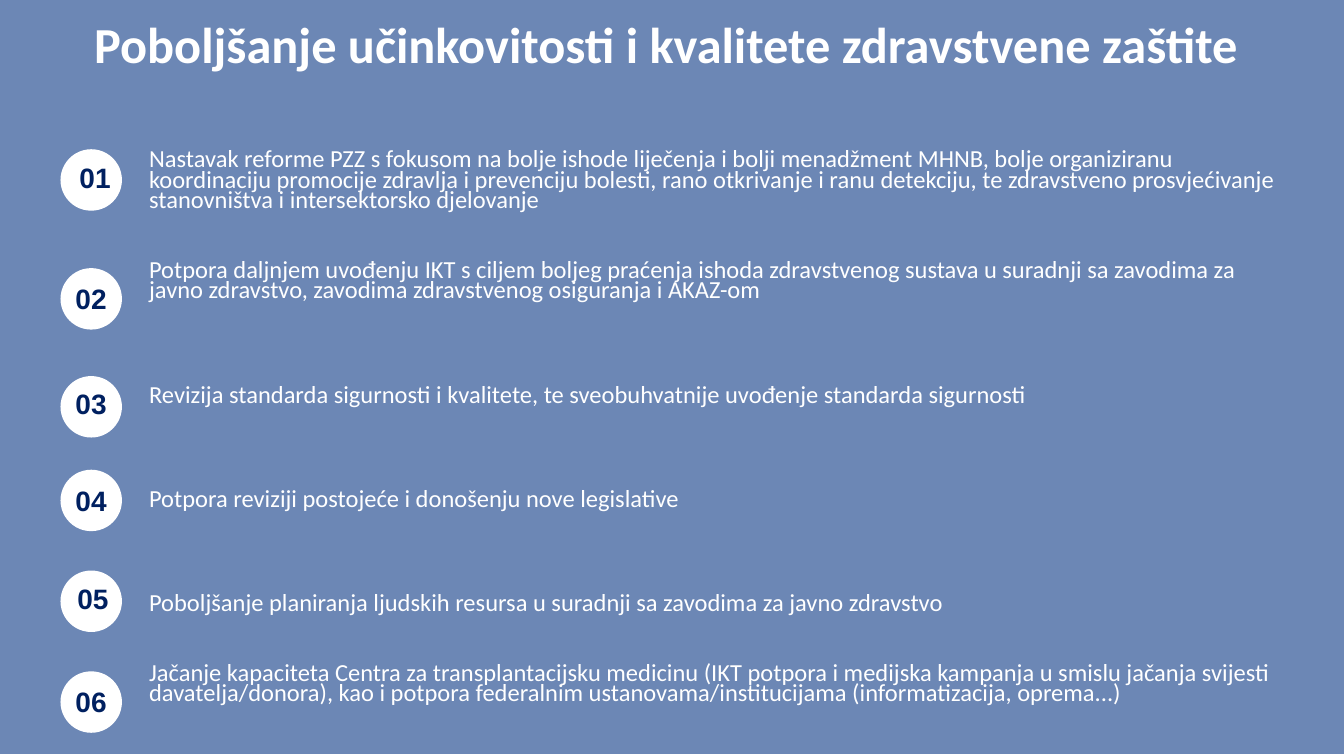
from lxml import etree
from pptx import Presentation
from pptx.dml.color import RGBColor
from pptx.enum.shapes import MSO_SHAPE
from pptx.enum.text import MSO_AUTO_SIZE, PP_ALIGN
from pptx.oxml.ns import qn
from pptx.util import Pt

RECTANGLE, OVAL = MSO_SHAPE.RECTANGLE, MSO_SHAPE.OVAL
LEFT, CENTER = PP_ALIGN.LEFT, PP_ALIGN.CENTER
GROW, FIXED = MSO_AUTO_SIZE.SHAPE_TO_FIT_TEXT, MSO_AUTO_SIZE.NONE

THEME = {
    "backdrop": RGBColor(0x2F, 0x55, 0x97),
    "white": RGBColor(0xFF, 0xFF, 0xFF),
    "navy": RGBColor(0x00, 0x20, 0x60),
    "title": {"name": "Calibri", "size": Pt(36), "bold": True},
    "body": {"name": "Calibri", "size": Pt(17.5), "bold": False},
    "number": {"name": "Arial", "size": Pt(20), "bold": True},
}

TITLE = "Poboljšanje učinkovitosti i kvalitete zdravstvene zaštite "
CIRCLE_LEFT, CIRCLE_SIZE = 43.2, 43.9
GAP, WIDE_GAP = 34.95, 59.9

MEASURES = [
    (0, "Nastavak reforme PZZ s fokusom na bolje ishode liječenja i bolji menadžment MHNB, "
        "bolje organiziranu koordinaciju promocije zdravlja i prevenciju bolesti, rano otkrivanje "
        "i ranu detekciju, te zdravstveno prosvjećivanje stanovništva i intersektorsko djelovanje"),
    (GAP, "Potpora daljnjem uvođenju IKT s ciljem boljeg praćenja ishoda zdravstvenog sustava "
          "u suradnji sa zavodima za javno zdravstvo, zavodima zdravstvenog osiguranja i AKAZ-om"),
    (WIDE_GAP, "Revizija standarda sigurnosti i kvalitete, te sveobuhvatnije uvođenje standarda sigurnosti"),
    (WIDE_GAP, "Potpora reviziji postojeće i donošenju nove legislative"),
    (WIDE_GAP, "Poboljšanje planiranja ljudskih resursa u suradnji sa zavodima za javno zdravstvo"),
    (GAP, "Jačanje kapaciteta Centra za transplantacijsku medicinu (IKT potpora i medijska kampanja "
          "u smislu jačanja svijesti davatelja/donora), kao i potpora federalnim "
          "ustanovama/institucijama (informatizacija, oprema...)"),
]

MARKERS = [
    (106.6, 49.7, 110.9),
    (191.5, 46.8, 197.3),
    (268.6, 46.8, 272.2),
    (335.5, 46.8, 342),
    (407.5, 48.2, 411.8),
    (479.5, 46.8, 485.3),
]

deck = Presentation()
deck.slide_width, deck.slide_height = Pt(960), Pt(540)
page = deck.slides.add_slide(deck.slide_layouts[6])


def add_plain_shape(kind, left, top, width, height, color):
    shape = page.shapes.add_shape(kind, Pt(left), Pt(top), Pt(width), Pt(height))
    shape.shadow.inherit = False
    shape.fill.solid()
    shape.fill.fore_color.rgb = color
    shape.line.fill.background()
    return shape


def add_text(bounds, paragraphs, style, color, align=LEFT, wrap=True, size_mode=GROW, spacing=None):
    box = page.shapes.add_textbox(*[Pt(value) for value in bounds])
    frame = box.text_frame
    frame.word_wrap = wrap
    frame.auto_size = size_mode
    for index, (gap, text) in enumerate(paragraphs):
        para = frame.add_paragraph() if index else frame.paragraphs[0]
        layout = {"alignment": align, "line_spacing": spacing, "space_before": Pt(gap)}
        for key, value in layout.items():
            setattr(para, key, value)
        span = para.add_run()
        span.text = text
        for key, value in THEME[style].items():
            setattr(span.font, key, value)
        span.font.color.rgb = color


backdrop = add_plain_shape(RECTANGLE, 0, -1.4, 960, 540, THEME["backdrop"])
backdrop_color = backdrop.element.find(".//" + qn("a:srgbClr"))
etree.SubElement(backdrop_color, qn("a:alpha"), val="70000")

add_text((0, 5.8, 960, 51), [(0, TITLE)], "title", THEME["white"], align=CENTER)
add_text((99.4, 104.4, 830, 438.5), MEASURES, "body", THEME["white"], size_mode=FIXED, spacing=0.7)

for number, (circle_top, label_left, label_top) in enumerate(MARKERS, start=1):
    add_plain_shape(OVAL, CIRCLE_LEFT, circle_top, CIRCLE_SIZE, CIRCLE_SIZE, THEME["white"])
    add_text((label_left, label_top, 36.7, 31.7), [(0, f"{number:02d}")], "number", THEME["navy"], wrap=False)

deck.save("out.pptx")
